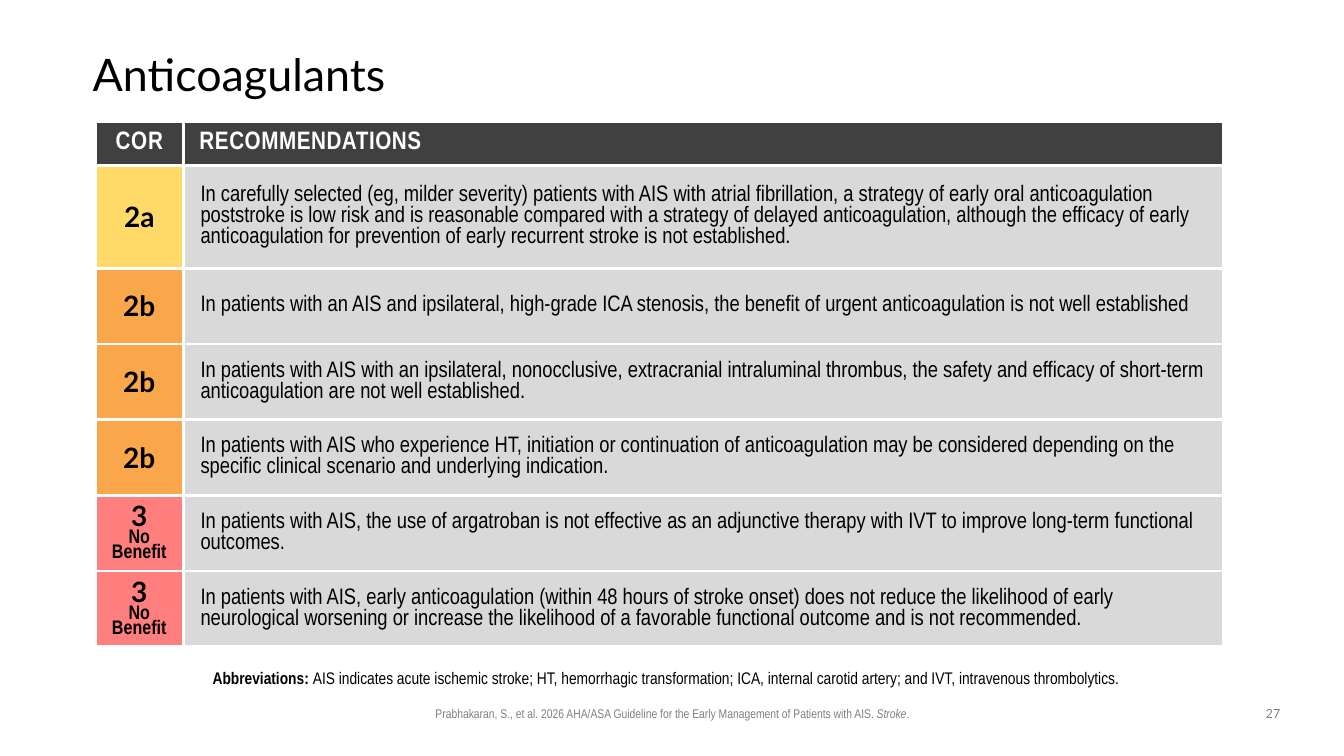
from dataclasses import dataclass

from lxml import etree
from pptx import Presentation
from pptx.dml.color import RGBColor
from pptx.enum import text as t
from pptx.oxml import ns
from pptx.util import Pt


@dataclass(frozen=True)
class Theme:
    heading: str = "Lato"
    body: str = "Arial Narrow"
    black: str = "000000"
    white: str = "FFFFFF"
    muted: str = "808080"
    header: str = "404040"
    panel: str = "D9D9D9"
    title_size: int = 32
    class_size: int = 20
    header_size: int = 18
    body_size: int = 16
    label_size: int = 14
    note_size: int = 12
    footer_size: int = 9


CLASS_COLORS = {"2a": "FFDA68", "2b": "FAA74B", "3": "FF7F7F"}

RECOMMENDATIONS = [
    ("2a", "In carefully selected (eg, milder severity) patients with AIS with atrial fibrillation, "
           "a strategy of early oral anticoagulation poststroke is low risk and is reasonable compared "
           "with a strategy of delayed anticoagulation, although the efficacy of early anticoagulation "
           "for prevention of early recurrent stroke is not established."),
    ("2b", "In patients with an AIS and ipsilateral, high-grade ICA stenosis, the benefit of urgent "
           "anticoagulation is not well established"),
    ("2b", "In patients with AIS with an ipsilateral, nonocclusive, extracranial intraluminal thrombus, "
           "the safety and efficacy of short-term anticoagulation are not well established."),
    ("2b", "In patients with AIS who experience HT, initiation or continuation of anticoagulation may be "
           "considered depending on the specific clinical scenario and underlying indication."),
    ("3", "In patients with AIS, the use of argatroban is not effective as an adjunctive therapy with IVT "
          "to improve long-term functional outcomes."),
    ("3", "In patients with AIS, early anticoagulation (within 48 hours of stroke onset) does not reduce "
          "the likelihood of early neurological worsening or increase the likelihood of a favorable "
          "functional outcome and is not recommended."),
]


class SlideBuilder:
    def __init__(self, slide, theme):
        self.slide = slide
        self.theme = theme

    def add_span(self, para, words, size, color, font=None, bold=False, italic=False, tracking=0):
        """Append a run; tracking is letter spacing in hundredths of a point."""
        span = para.add_run()
        span.text = words
        span.font.name = font or self.theme.body
        span.font.size = Pt(size)
        span.font.color.rgb = RGBColor.from_string(color)
        span.font.bold = bold
        span.font.italic = italic
        if tracking:
            span.font._element.set("spc", str(tracking))

    def add_text(self, left, top, width, height, align=t.PP_ALIGN.CENTER,
                 anchor=t.MSO_ANCHOR.TOP, margins=(7.2, 3.6, 7.2, 3.6), spacing=None):
        """Add a text box and return its paragraph, ready for runs."""
        box = self.slide.shapes.add_textbox(Pt(left), Pt(top), Pt(width), Pt(height))
        frame = box.text_frame
        frame.word_wrap = True
        frame.vertical_anchor = anchor
        (frame.margin_left, frame.margin_top,
         frame.margin_right, frame.margin_bottom) = map(Pt, margins)
        para = frame.paragraphs[0]
        para.alignment = align
        para.line_spacing = spacing
        return para

    def add_table(self, left, top, widths, heights):
        frame = self.slide.shapes.add_table(len(heights), len(widths), Pt(left), Pt(top),
                                            Pt(sum(widths)), Pt(sum(heights)))
        table = frame.table
        table.first_row = table.horz_banding = False
        for column, width in zip(table.columns, widths):
            column.width = Pt(width)
        for row, height in zip(table.rows, heights):
            row.height = Pt(height)
        return table

    def style_cell(self, cell, fill, side_margin=3.6):
        """Set borders, fill and margins, and return the first paragraph."""
        properties = cell._tc.get_or_add_tcPr()
        for side in ("lnL", "lnR", "lnT", "lnB"):
            line = etree.SubElement(properties, ns.qn(f"a:{side}"), w=str(Pt(2.25)))
            paint = etree.SubElement(line, ns.qn("a:solidFill"))
            etree.SubElement(paint, ns.qn("a:srgbClr"), val=self.theme.white)
        cell.fill.solid()
        cell.fill.fore_color.rgb = RGBColor.from_string(fill)
        cell.vertical_anchor = t.MSO_ANCHOR.MIDDLE
        cell.margin_left = cell.margin_right = Pt(side_margin)
        cell.margin_top = cell.margin_bottom = Pt(3.6)
        return cell.text_frame.paragraphs[0]

    def indent(self, para, points):
        properties = para._p.get_or_add_pPr()
        properties.set("marL", str(Pt(points)))
        properties.set("indent", "0")

    def fill_header(self, cells):
        theme = self.theme
        for cell, label, tracking in zip(cells, ("COR", "RECOMMENDATIONS"), (50, 40)):
            para = self.style_cell(cell, theme.header, 7.2)
            if label == "COR":
                para.alignment = t.PP_ALIGN.CENTER
            else:
                self.indent(para, 4.3)
            self.add_span(para, label, theme.header_size, theme.white, bold=True, tracking=tracking)

    def fill_recommendation(self, cells, grade, advice):
        theme = self.theme
        grade_cell, advice_cell = cells
        para = self.style_cell(grade_cell, CLASS_COLORS[grade])
        para.alignment = t.PP_ALIGN.CENTER
        self.add_span(para, grade, theme.class_size, theme.black, theme.heading, bold=True)
        if grade == "3":
            para.line_spacing = 0.8
            label = grade_cell.text_frame.add_paragraph()
            label.alignment = t.PP_ALIGN.CENTER
            label.line_spacing = 0.8
            self.add_span(label, "No Benefit", theme.label_size, theme.black, bold=True)
        para = self.style_cell(advice_cell, theme.panel)
        self.indent(para, 8.64)
        self.add_span(para, advice, theme.body_size, theme.black)


def main():
    deck = Presentation()
    deck.slide_width, deck.slide_height = Pt(960), Pt(540)
    theme = Theme()
    page = SlideBuilder(deck.slides.add_slide(deck.slide_layouts[6]), theme)

    source = page.add_text(170, 500.4, 620.6, 18)
    for words, italic in (
        ("Prabhakaran, S., et al. 2026 AHA/ASA Guideline for the Early Management of Patients with AIS. ", False),
        ("Stroke", True),
        (".", False),
    ):
        page.add_span(source, words, theme.footer_size, theme.muted, italic=italic)

    title = page.add_text(66.24, 28.8, 828, 51.84, t.PP_ALIGN.LEFT, t.MSO_ANCHOR.MIDDLE,
                          (0, 0, 0, 0), 0.9)
    page.add_span(title, "Anticoagulants", theme.title_size, theme.black, theme.heading)

    heights = [31.4, 73.6] + [54.1] * (len(RECOMMENDATIONS) - 1)
    table = page.add_table(68, 86.6, [63, 742.6], heights)
    header, *rows = [list(row.cells) for row in table.rows]
    page.fill_header(header)
    for cells, (grade, advice) in zip(rows, RECOMMENDATIONS):
        page.fill_recommendation(cells, grade, advice)

    note = page.add_text(115.9, 462.2, 727.2, 33.1, anchor=t.MSO_ANCHOR.BOTTOM,
                         margins=(0, 3.6, 7.2, 3.6), spacing=0.9)
    page.add_span(note, "Abbreviations: ", theme.note_size, theme.black, bold=True)
    page.add_span(note, "AIS indicates acute ischemic stroke; HT, hemorrhagic transformation; ICA, internal "
                  "carotid artery; and IVT, intravenous thrombolytics.", theme.note_size, theme.black)

    number = page.add_text(894.2, 500.4, 30.2, 18.7)
    page.add_span(number, "27", theme.footer_size, theme.muted, theme.heading)

    deck.save("out.pptx")


if __name__ == "__main__":
    main()
